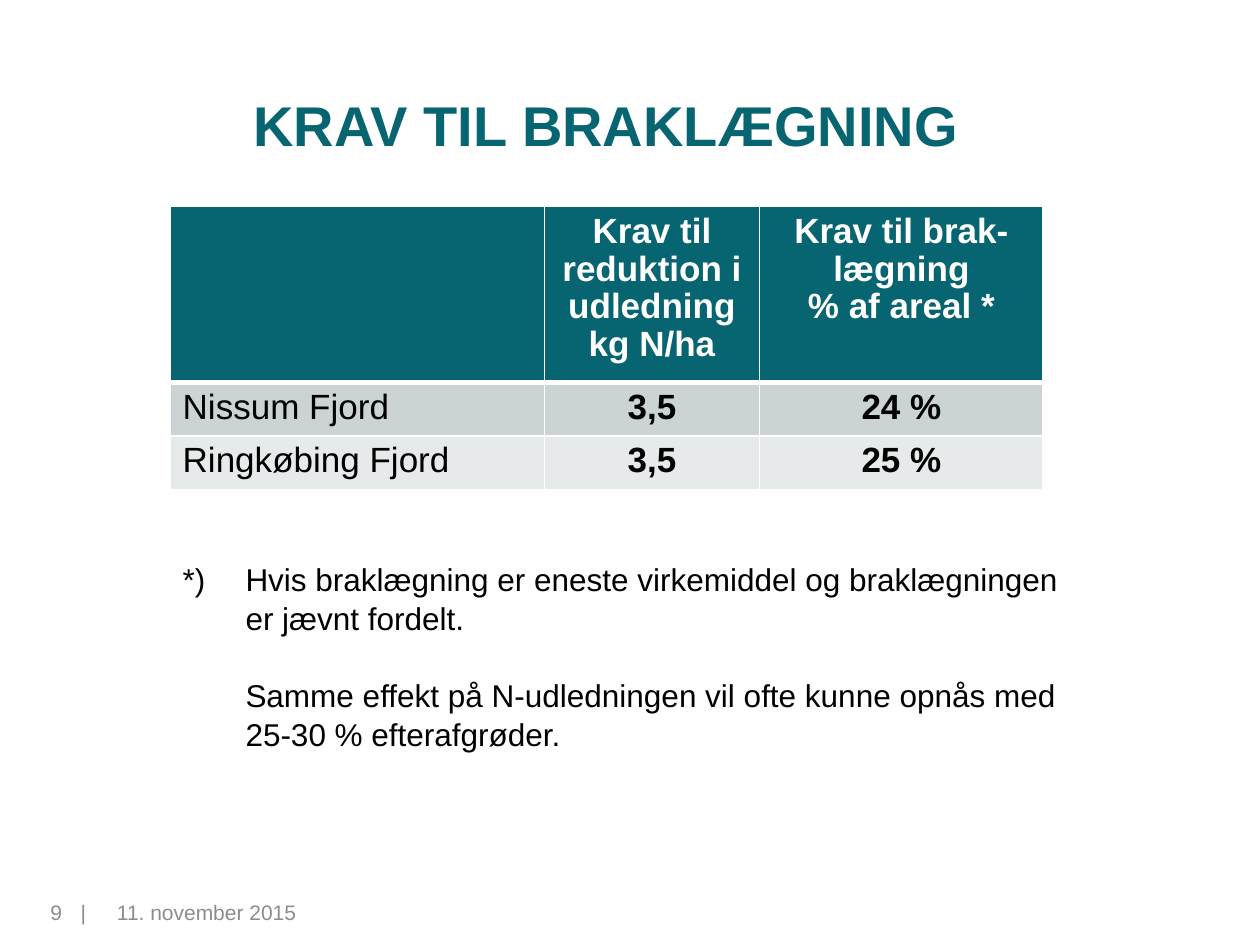
from dataclasses import dataclass

from lxml import etree
from pptx import Presentation
from pptx.dml.color import RGBColor
from pptx.enum.text import MSO_ANCHOR, PP_ALIGN
from pptx.oxml.ns import qn
from pptx.util import Inches, Pt

LEFT, MID = PP_ALIGN.LEFT, PP_ALIGN.CENTER
CENTER = MSO_ANCHOR.MIDDLE


@dataclass(frozen=True)
class Theme:
    """Colours, font and type sizes of the slide."""
    font: str = "Arial"
    teal: str = "076471"
    white: str = "FFFFFF"
    black: str = "000000"
    gray: str = "8C8C8C"
    bands: tuple = ("CCD3D5", "E7EAEB")
    title: int = 32
    cell: int = 20
    note: int = 18
    foot: int = 12


THEME = Theme()
COLS = (2.97, 1.71, 2.25)
ROWS = (1.33, 0.4, 0.4)
DATA = (
    ("", "Krav til reduktion i udledning\vkg N/ha",
     "Krav til brak-lægning\v% af areal *"),
    ("Nissum Fjord", "3,5", "24 %"),
    ("Ringkøbing Fjord", "3,5", "25 %"),
)


def add_run(para, text, size, color, bold=False):
    """Add one run, with line breaks at vertical tabs."""
    for i, line in enumerate(text.split("\v")):
        if i:
            para.add_line_break()
        run = para.add_run()
        run.text = line
        font = run.font
        font.name, font.size, font.bold = THEME.font, Pt(size), bold
        font.color.rgb = RGBColor.from_string(color)


def add_title(slide, text):
    """Place and fill the title placeholder."""
    title = slide.shapes.title
    title.left, title.top = Inches(0.91), Inches(0.36)
    title.width, title.height = Inches(7.8), Inches(1.25)
    frame = title.text_frame
    frame.vertical_anchor = CENTER
    para = frame.paragraphs[0]
    para.alignment = MID
    add_run(para, text, THEME.title, THEME.teal, True)


def add_box(slide, left, top, width, height):
    """Add a wrapping text box and return its frame."""
    box = slide.shapes.add_textbox(
        Inches(left), Inches(top), Inches(width), Inches(height))
    box.text_frame.word_wrap = True
    return box.text_frame


def set_edges(cell, base):
    """Draw white cell borders with the given bottom width."""
    props = cell._tc.get_or_add_tcPr()
    edges = (("L", 1), ("R", 1), ("T", 1), ("B", base))
    for i, (side, width) in enumerate(edges):
        line = etree.Element(qn(f"a:ln{side}"), w=str(Pt(width)))
        fill = etree.SubElement(line, qn("a:solidFill"))
        etree.SubElement(fill, qn("a:srgbClr"), val=THEME.white)
        props.insert(i, line)


def fill_cell(cell, text, row, col):
    """Style and fill one cell by its place in the grid."""
    head = row == 0
    back = THEME.teal if head else THEME.bands[row - 1]
    cell.fill.solid()
    cell.fill.fore_color.rgb = RGBColor.from_string(back)
    set_edges(cell, 3 if head else 1)
    para = cell.text_frame.paragraphs[0]
    para.alignment = MID if col else LEFT
    para.line_spacing = 0.97
    if text:
        color = THEME.white if head else THEME.black
        add_run(para, text, THEME.cell, color, head or col > 0)


def add_grid(slide):
    """Add the table of demands per fjord."""
    table = slide.shapes.add_table(
        len(ROWS), len(COLS), Inches(1.35), Inches(1.64),
        Inches(sum(COLS)), Inches(sum(ROWS))).table
    for col, width in zip(table.columns, COLS):
        col.width = Inches(width)
    for row, height in zip(table.rows, ROWS):
        row.height = Inches(height)
    for r, texts in enumerate(DATA):
        for c, text in enumerate(texts):
            fill_cell(table.cell(r, c), text, r, c)


def add_note(slide):
    """Add the footnote with a hanging mark."""
    frame = add_box(slide, 1.35, 4.38, 7.49, 1.62)
    texts = (
        "*)\tHvis braklægning er eneste virkemiddel og braklægningen"
        "\ver jævnt fordelt.",
        "Samme effekt på N-udledningen vil ofte kunne opnås med"
        "\v25-30 % efterafgrøder.",
    )
    for i, text in enumerate(texts):
        para = frame.add_paragraph() if i else frame.paragraphs[0]
        props = para._p.get_or_add_pPr()
        props.set("marL", str(Inches(0.5)))
        props.set("indent", str(0 if i else -Inches(0.5)))
        para.line_spacing = 1.04
        if i:
            para.space_before = Pt(21.5)
        add_run(para, text, THEME.note, THEME.black)


def add_foot(slide):
    """Add the date, and the page number with its bar."""
    date = add_box(slide, 0.83, 7.09, 2.33, 0.4).paragraphs[0]
    add_run(date, "11. november 2015", THEME.foot, THEME.gray)
    frame = add_box(slide, 0, 7.09, 0.78, 0.4)
    frame.margin_left, frame.margin_right = Inches(0.4), 0
    page = frame.paragraphs[0]
    tabs = etree.SubElement(page._p.get_or_add_pPr(), qn("a:tabLst"))
    etree.SubElement(tabs, qn("a:tab"), pos=str(Inches(0.24)), algn="l")
    add_run(page, "9\t|", THEME.foot, THEME.gray)


def main():
    """Build and save the slide."""
    deck = Presentation()
    deck.slide_width, deck.slide_height = Inches(10), Inches(7.5)
    slide = deck.slides.add_slide(deck.slide_layouts[5])
    add_title(slide, "KRAV TIL BRAKLÆGNING")
    add_foot(slide)
    add_grid(slide)
    add_note(slide)
    deck.save("out.pptx")


if __name__ == "__main__":
    main()
